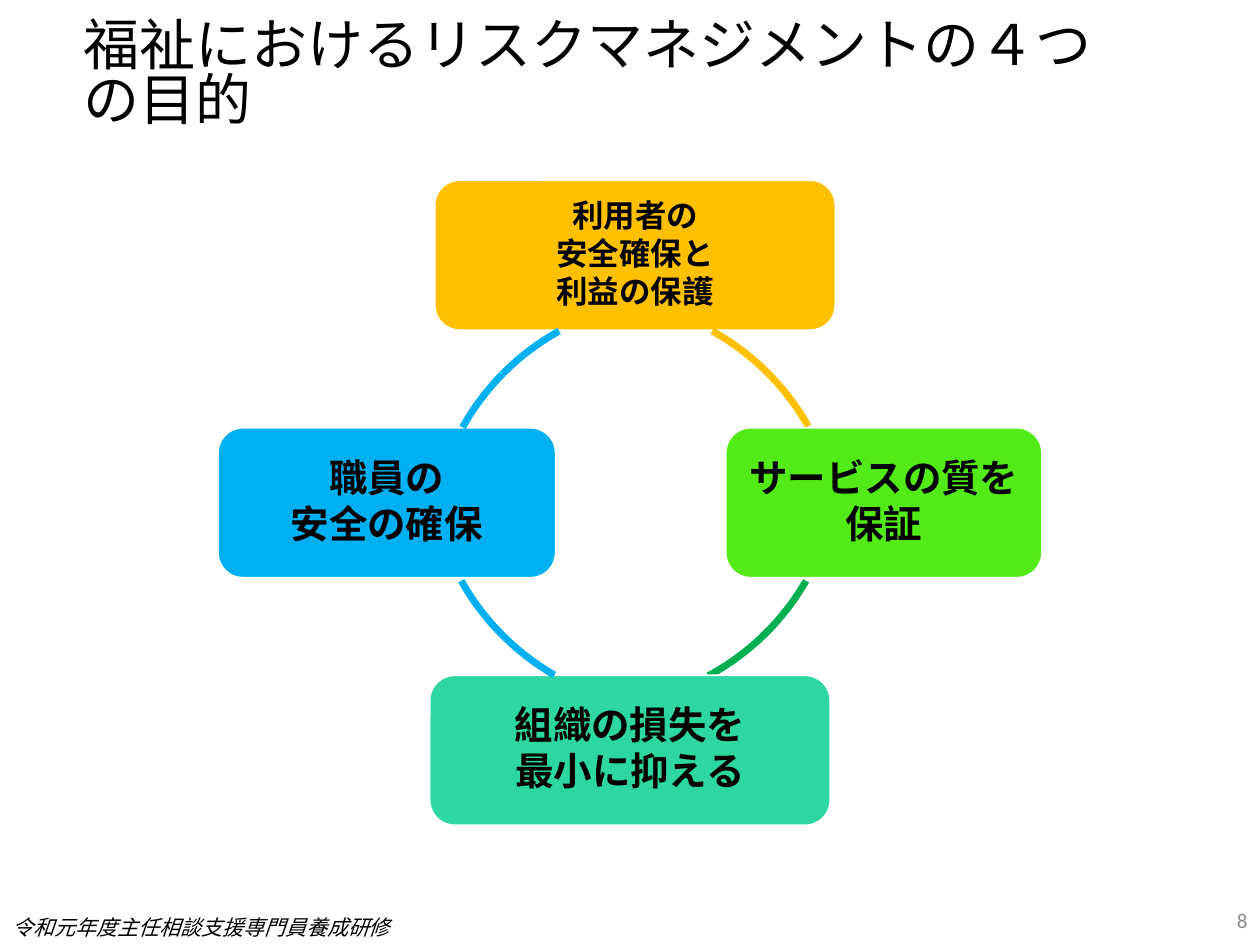
import pptx
import pptx.util
import pptx.dml.color
import pptx.enum.shapes
import pptx.enum.text
from dataclasses import dataclass

# Grid: 100 columns by 75 rows on a 10 x 7.5 inch slide
COLUMNS, ROWS = 100, 75
SLIDE_WIDTH, SLIDE_HEIGHT = pptx.util.Inches(10), pptx.util.Inches(7.5)
ALIGN = pptx.enum.text.PP_ALIGN
ANCHOR = pptx.enum.text.MSO_ANCHOR
SHAPE = pptx.enum.shapes.MSO_SHAPE


@dataclass(frozen=True)
class Theme:
    amber: str = "FFC000"
    lime: str = "53EB17"
    green: str = "00B050"
    teal: str = "2ED7A1"
    sky: str = "00B0F0"
    white: str = "FFFFFF"
    black: str = "000000"
    grey: str = "8C8C8C"
    title_size: int = 32
    goal_size: int = 22
    small_goal_size: int = 18
    note_size: int = 12
    title_font: str = "Arial"
    body_font: str = "Calibri"
    footer_font: str = "Noto Sans CJK JP"


THEME = Theme()


@dataclass(frozen=True)
class Goal:
    text: str
    column: float  # left edge
    row: float  # top edge
    width: float
    color: str
    size: int = THEME.goal_size
    inset: float = 0.09


@dataclass(frozen=True)
class Arc:
    column: float  # left edge of the full circle
    row: float
    start: float  # degrees, clockwise from the right
    end: float
    color: str


GOAL_HEIGHT = 11.9
TOP, MIDDLE, BOTTOM = (14.3 + 19.65 * level for level in range(3))
CIRCLE = 39.5

GOALS = [
    Goal("利用者の\n安全確保と\n利益の保護", 34.5, TOP, 31.8, THEME.amber,
         THEME.small_goal_size, 0.07),
    Goal("サービスの質を\n保証", 57.6, MIDDLE, 25.1, THEME.lime),
    Goal("組織の損失を\n最小に抑える", 34.1, BOTTOM, 31.8, THEME.teal),
    Goal("職員の\n安全の確保", 17.3, MIDDLE, 26.8, THEME.sky),
]
ARCS = [
    Arc(27.2, 23.8, 299, 330.6, THEME.amber),
    Arc(27.1, 16.5, 29.9, 61.7, THEME.green),
    Arc(34.1, 16.7, 119.9, 150.8, THEME.sky),
    Arc(34.2, 23.8, 209.2, 241, THEME.sky),
]


def rgb(color: str) -> pptx.dml.color.RGBColor:
    return pptx.dml.color.RGBColor.from_string(color)


def area(column: float, row: float, width: float, height: float) -> list[int]:
    cell_width, cell_height = SLIDE_WIDTH / COLUMNS, SLIDE_HEIGHT / ROWS
    return [round(column * cell_width), round(row * cell_height),
            round(width * cell_width), round(height * cell_height)]


def write(frame, text: str, *, size: int, font: str = THEME.body_font,
          color: str = THEME.black, bold: bool = False, italic: bool = False,
          align=ALIGN.LEFT, anchor=ANCHOR.MIDDLE, line_spacing: float = 1.0,
          space_after: float = 0) -> None:
    frame.text = text
    frame.word_wrap = True
    frame.vertical_anchor = anchor
    for paragraph in frame.paragraphs:
        paragraph.alignment = align
        paragraph.line_spacing = line_spacing
        paragraph.space_after = pptx.util.Pt(space_after)
        for run in paragraph.runs:
            run.font.size = pptx.util.Pt(size)
            run.font.name = font
            run.font.bold = bold
            run.font.italic = italic
            run.font.color.rgb = rgb(color)


def draw_goal(slide, goal: Goal) -> None:
    box = slide.shapes.add_shape(
        SHAPE.ROUNDED_RECTANGLE,
        *area(goal.column, goal.row, goal.width, GOAL_HEIGHT))
    box.shadow.inherit = False
    box.fill.solid()
    box.fill.fore_color.rgb = rgb(goal.color)
    box.line.color.rgb = rgb(THEME.white)
    box.line.width = pptx.util.Pt(1)
    frame = box.text_frame
    frame.margin_left = frame.margin_right = pptx.util.Inches(goal.inset)
    frame.margin_top = frame.margin_bottom = pptx.util.Inches(goal.inset)
    write(frame, goal.text, size=goal.size, bold=True, align=ALIGN.CENTER,
          line_spacing=0.9, space_after=round(goal.size * 0.12, 1))


def draw_arc(slide, arc: Arc) -> None:
    curve = slide.shapes.add_shape(
        SHAPE.ARC, *area(arc.column, arc.row, CIRCLE, CIRCLE))
    curve.shadow.inherit = False
    # Angles are stored in 60000ths of a degree, adjustments in 100000ths
    curve.adjustments[0] = arc.start * 0.6
    curve.adjustments[1] = arc.end * 0.6
    curve.fill.background()
    curve.line.color.rgb = rgb(arc.color)
    curve.line.width = pptx.util.Pt(4)


def main() -> None:
    deck = pptx.Presentation()
    deck.slide_width, deck.slide_height = SLIDE_WIDTH, SLIDE_HEIGHT
    slide = deck.slides.add_slide(deck.slide_layouts[5])

    # Title
    title = slide.shapes.title
    title.left, title.top, title.width, title.height = area(5.6, 1.1, 86.2, 10)
    write(title.text_frame, "福祉におけるリスクマネジメントの４つの目的",
          size=THEME.title_size, font=THEME.title_font, line_spacing=0.9)
    title.text_frame.auto_size = pptx.enum.text.MSO_AUTO_SIZE.TEXT_TO_FIT_SHAPE

    # Cycle of four goals
    for goal, arc in zip(GOALS, ARCS):
        draw_goal(slide, goal)
        draw_arc(slide, arc)

    # Page number and footer
    number = slide.shapes.add_textbox(*area(77.5, 71, 22.5, 4))
    write(number.text_frame, "8", size=THEME.note_size, color=THEME.grey,
          align=ALIGN.RIGHT)
    footer = slide.shapes.add_textbox(*area(0, 72.1, 33.8, 3.1))
    write(footer.text_frame, "令和元年度主任相談支援専門員養成研修",
          size=THEME.note_size, font=THEME.footer_font, italic=True,
          anchor=ANCHOR.TOP)

    deck.save("out.pptx")


if __name__ == "__main__":
    main()
